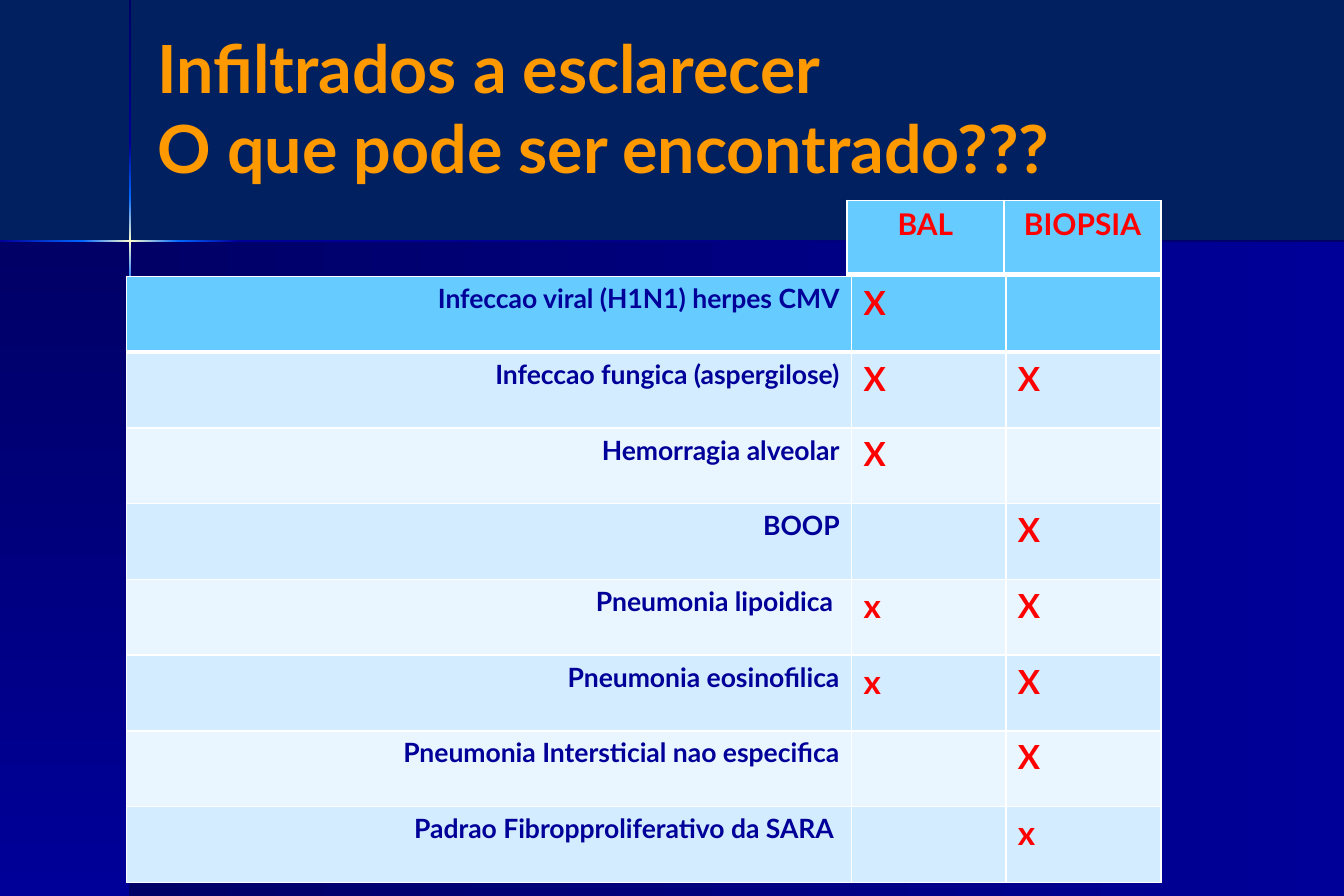
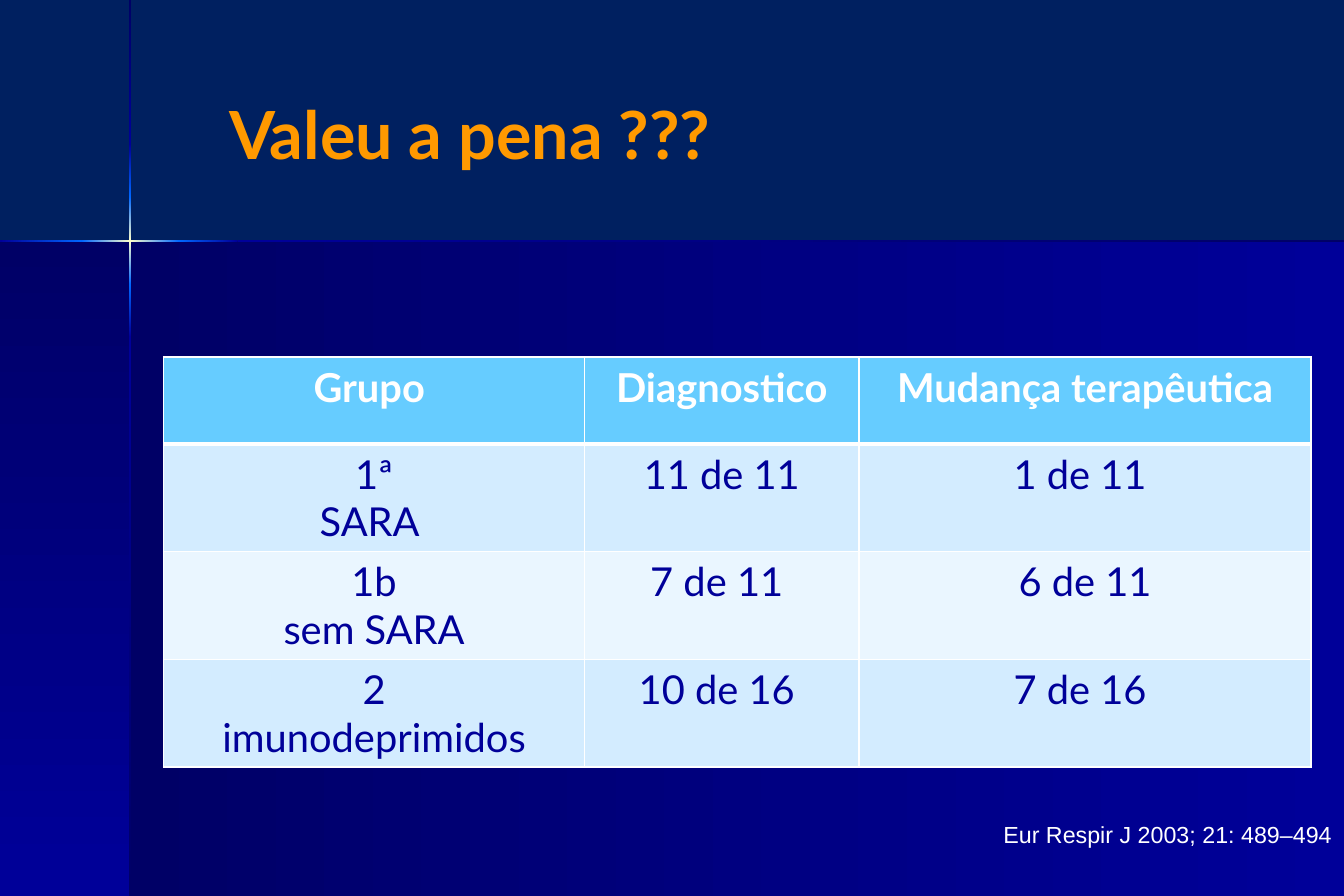
"""Build two slides on lung infiltrates, with findings and outcome tables."""
from dataclasses import dataclass
from itertools import pairwise

from lxml import etree
from pptx import Presentation
from pptx.dml.color import RGBColor
from pptx.enum.shapes import MSO_SHAPE
from pptx.enum.text import MSO_ANCHOR, MSO_AUTO_SIZE, PP_ALIGN
from pptx.oxml.ns import qn
from pptx.util import Cm, Pt

RECTANGLE = MSO_SHAPE.RECTANGLE
MIDDLE = MSO_ANCHOR.MIDDLE
NO_AUTOFIT = MSO_AUTO_SIZE.NONE
LEFT, CENTER, RIGHT = PP_ALIGN.LEFT, PP_ALIGN.CENTER, PP_ALIGN.RIGHT


@dataclass(frozen=True)
class TextStyle:
    size: int
    color: str
    bold: bool = True
    alignment: PP_ALIGN = CENTER
    font: str = "Lato"


@dataclass(frozen=True)
class Theme:
    background: str = "002060"
    dark: str = "000066"
    navy: str = "000099"
    blue: str = "0066FF"
    glow: str = "FFFFCC"
    header: str = "66CCFF"
    bands: tuple = ("D3ECFF", "EAF6FF")
    border: str = "FFFFFF"
    title: TextStyle = TextStyle(40, "FF9900", alignment=LEFT)
    label: TextStyle = TextStyle(16, "000099", alignment=RIGHT)
    mark: TextStyle = TextStyle(20, "FF0000", alignment=LEFT)
    mark_heading: TextStyle = TextStyle(18, "FF0000")
    heading: TextStyle = TextStyle(24, "FFFFFF")
    body: TextStyle = TextStyle(24, "000099", bold=False)
    citation: TextStyle = TextStyle(14, "FFFFFF", False, RIGHT, "Arial")


def format_text(text_frame, style):
    for paragraph in text_frame.paragraphs:
        paragraph.alignment = style.alignment
        for run in paragraph.runs:
            run.font.name = style.font
            run.font.size = Pt(style.size)
            run.font.bold = style.bold
            run.font.color.rgb = RGBColor.from_string(style.color)


def add_grid(slide, left, top, widths, heights, rows, styles):
    frame = slide.shapes.add_table(
        len(rows), len(widths), Cm(left), Cm(top), Cm(sum(widths)), Cm(sum(heights)))
    table = frame.table
    for column, width in zip(table.columns, widths):
        column.width = Cm(width)
    for row_index, (texts, height) in enumerate(zip(rows, heights)):
        table.rows[row_index].height = Cm(height)
        fill = theme.bands[(row_index - 1) % 2] if row_index else theme.header
        border_widths = {"a:lnL": 1, "a:lnR": 1,
                         "a:lnT": 3 if row_index == 1 else 1,
                         "a:lnB": 3 if row_index == 0 else 1}
        for column_index, text in enumerate(texts):
            cell = table.cell(row_index, column_index)
            cell.text_frame.text = text
            format_text(cell.text_frame, styles[row_index][column_index])
            properties = cell._tc.get_or_add_tcPr()
            for tag, width in border_widths.items():
                line = etree.SubElement(properties, qn(tag), w=str(Pt(width)))
                solid = etree.SubElement(line, qn("a:solidFill"))
                etree.SubElement(solid, qn("a:srgbClr"), val=theme.border)
            cell.fill.solid()
            cell.fill.fore_color.rgb = RGBColor.from_string(fill)


theme = Theme()
slide_width, slide_height = 28.58, 19.05
presentation = Presentation()
presentation.slide_width = Cm(slide_width)
presentation.slide_height = Cm(slide_height)
layout = presentation.slide_layouts[5]
layout.background.fill.solid()
layout.background.fill.fore_color.rgb = RGBColor.from_string(theme.background)
for placeholder in list(layout.placeholders)[1:]:
    layout.shapes.element.remove(placeholder.element)

titles = [
    ("Infiltrados a esclarecer \vO que pode ser encontrado???", 3.1, 0.28, 23.57, 0.25),
    ("Valeu a pena ???", 2.08, 0.84, 24.82, 2.79),
]
slides = []
for text, left, top, width, indent in titles:
    slide = presentation.slides.add_slide(layout)
    title = slide.shapes.title
    title.left, title.top, title.width, title.height = Cm(left), Cm(top), Cm(width), Cm(3.99)
    title.text_frame.text = text
    title.text_frame.auto_size = NO_AUTOFIT
    title.text_frame.vertical_anchor = MIDDLE
    title.text_frame.margin_left = Cm(indent)
    format_text(title.text_frame, theme.title)
    slides.append(slide)
findings_slide, outcome_slide = slides

cross_x, cross_y, beam = 2.77, 5.12, 0.05
vertical_stops = [(0, theme.dark), (3.07, theme.navy), (4.19, theme.blue),
                  (cross_y, theme.glow), (6.05, theme.blue), (7.16, theme.navy),
                  (slide_height, theme.dark)]
horizontal_stops = [(0, theme.navy), (1.74, theme.blue), (cross_x, theme.glow),
                    (3.81, theme.blue), (5.05, theme.navy), (slide_width, theme.dark)]
panels = [
    (cross_x, cross_y, slide_width - cross_x, slide_height - cross_y, theme.dark, theme.navy, 0),
    (0, cross_y, cross_x, slide_height - cross_y, theme.dark, theme.navy, 270),
]
for (start, first), (end, last) in pairwise(vertical_stops):
    panels.append((cross_x - beam / 2, start, beam, end - start, first, last, 270))
for (start, first), (end, last) in pairwise(horizontal_stops):
    panels.append((start, cross_y - beam / 2, end - start, beam, first, last, 0))

decorations = []
for left, top, width, height, first, last, angle in panels:
    shape = findings_slide.shapes.add_shape(
        RECTANGLE, Cm(left), Cm(top), Cm(width), Cm(height))
    shape.shadow.inherit = False
    shape.line.fill.background()
    shape.fill.gradient()
    shape.fill.gradient_angle = angle
    for stop, color in zip(shape.fill.gradient_stops, (first, last)):
        stop.color.rgb = RGBColor.from_string(color)
    decorations.append(shape)
for index, shape in enumerate(decorations, start=2):
    layout.shapes.element.insert(index, shape.element)

findings = [
    ("Infeccao viral (H1N1) herpes CMV", "X", ""),
    ("Infeccao fungica (aspergilose)", "X", "X"),
    ("Hemorragia alveolar", "X", ""),
    ("BOOP", "", "X"),
    ("Pneumonia lipoidica ", "x", "X"),
    ("Pneumonia eosinofilica", "x", "X"),
    ("Pneumonia Intersticial nao especifica", "", "X"),
    ("Padrao Fibropproliferativo da SARA ", "", "x"),
]
add_grid(findings_slide, 2.69, 5.88, [15.42, 3.28, 3.3], [1.61] * len(findings),
         findings, [[theme.label, theme.mark, theme.mark]] * len(findings))
add_grid(findings_slide, 18.01, 4.26, [3.34] * 2, [1.57],
         [("BAL", "BIOPSIA")], [[theme.mark_heading] * 2])

citation = outcome_slide.shapes.add_textbox(Cm(0), Cm(17.32), Cm(slide_width), Cm(1.3))
citation.text_frame.word_wrap = True
citation.text_frame.text = "Eur Respir J 2003; 21: 489–494"
format_text(citation.text_frame, theme.citation)

outcomes = [
    ("Grupo ", "Diagnostico", "Mudança terapêutica"),
    ("1ª\nSARA ", "11 de 11", "1 de 11 "),
    ("1b\nsem SARA", "7 de 11 ", "6 de 11"),
    ("2\nimunodeprimidos", "10 de 16 ", "7 de 16 "),
]
add_grid(outcome_slide, 3.48, 7.59, [8.95, 5.84, 9.61], [1.85] + [2.29] * 3,
         outcomes, [[theme.heading] * 3] + [[theme.body] * 3] * 3)

presentation.save("out.pptx")
